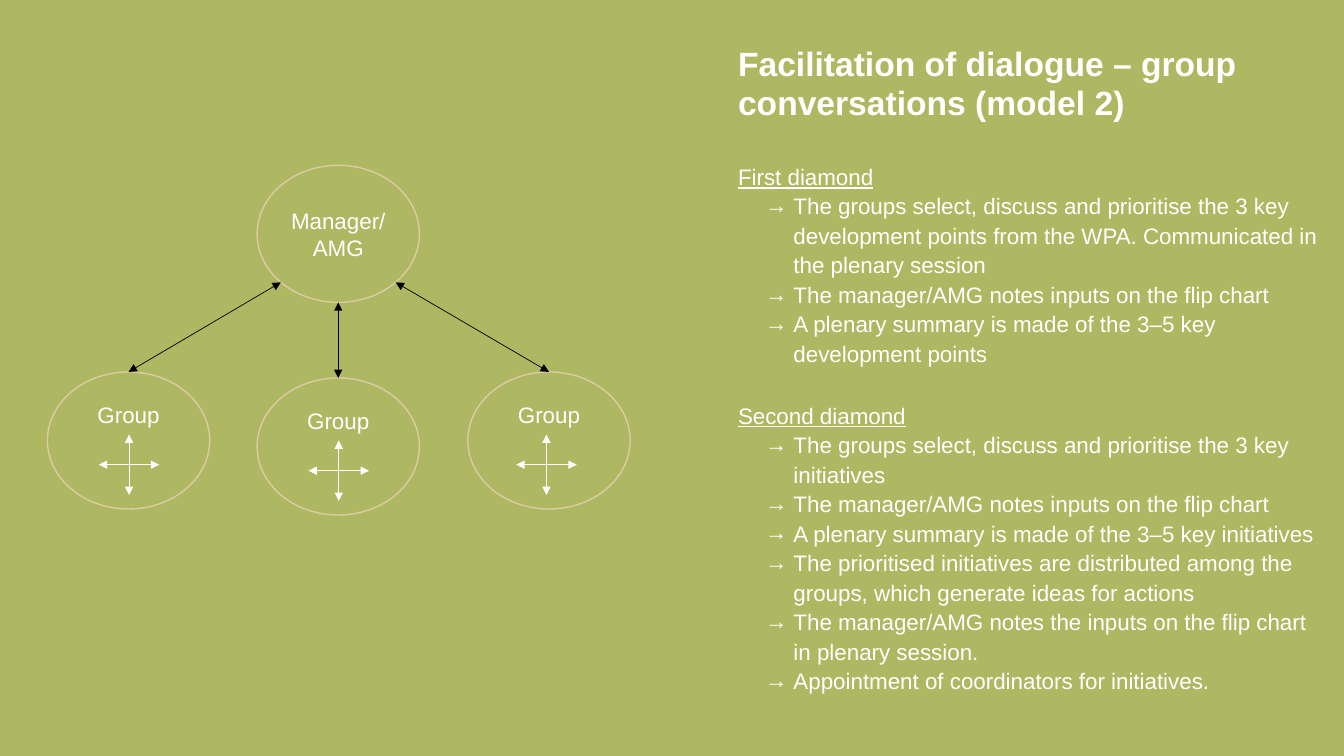
"""Build the slide on facilitating dialogue through group conversations."""
import math

from lxml import etree
from pptx import Presentation
from pptx.dml.color import RGBColor
from pptx.enum.shapes import MSO_CONNECTOR, MSO_SHAPE
from pptx.enum.text import MSO_ANCHOR, MSO_AUTO_SIZE, PP_ALIGN
from pptx.oxml.ns import qn
from pptx.util import Inches, Pt

ELLIPSE, STRAIGHT = MSO_SHAPE.OVAL, MSO_CONNECTOR.STRAIGHT
TOP, MIDDLE = MSO_ANCHOR.TOP, MSO_ANCHOR.MIDDLE
LEFT, CENTER = PP_ALIGN.LEFT, PP_ALIGN.CENTER
NO_AUTOFIT = MSO_AUTO_SIZE.NONE

COLORS = {"olive": "AEB862", "sand": "DDCBA4", "white": "FFFFFF", "black": "000000"}
CIRCLE_W, CIRCLE_H = 1.61, 1.36
MANAGER_LEFT, MANAGER_TOP = 2.55, 1.64
GROUPS = [(0.47, 3.69, 1.28), (2.55, 3.75, 3.36), (4.64, 3.69, 5.42)]
CROSS_DROP, CROSS_ARM = 0.92, 0.3

DIAMONDS = {
    "First diamond": [
        "The groups select, discuss and prioritise the 3 key development points "
        "from the WPA. Communicated in the plenary session",
        "The manager/AMG notes inputs on the flip chart",
        "A plenary summary is made of the 3–5 key development points",
    ],
    "Second diamond": [
        "The groups select, discuss and prioritise the 3 key initiatives",
        "The manager/AMG notes inputs on the flip chart",
        "A plenary summary is made of the 3–5 key initiatives",
        "The prioritised initiatives are distributed among the groups, "
        "which generate ideas for actions",
        "The manager/AMG notes the inputs on the flip chart in plenary session.",
        "Appointment of coordinators for initiatives.",
    ],
}


def color(name):
    """Return the named colour."""
    return RGBColor.from_string(COLORS[name])


class DialogueSlide:
    """Hold the style and the slide, and draw each kind of element."""

    def __init__(self, deck, font="Arial", size=16):
        """Add a title-only slide with a plain background."""
        self.font, self.size = font, size
        self.slide = deck.slides.add_slide(deck.slide_layouts[5])
        self.slide.background.fill.solid()
        self.slide.background.fill.fore_color.rgb = color("olive")

    def style(self, paragraph, size=None, bold=False, underline=False):
        """Set the font of a paragraph."""
        font = paragraph.font
        font.name, font.size = self.font, Pt(size or self.size)
        font.bold, font.underline = bold, underline
        font.color.rgb = color("white")

    def frame(self, shape, inset=0, bottom=0, anchor=TOP):
        """Set insets, wrapping and anchor of a text frame and return it."""
        frame = shape.text_frame
        frame.auto_size, frame.word_wrap = NO_AUTOFIT, True
        frame.vertical_anchor = anchor
        frame.margin_left = frame.margin_right = frame.margin_top = Inches(inset)
        frame.margin_bottom = Inches(bottom)
        return frame

    def title(self, text, left, top, width, height):
        """Place and format the title."""
        title = self.slide.shapes.title
        title.left, title.top = Inches(left), Inches(top)
        title.width, title.height = Inches(width), Inches(height)
        paragraph = self.frame(title).paragraphs[0]
        paragraph.text = text
        paragraph.alignment, paragraph.line_spacing = LEFT, 0.97
        self.style(paragraph, size=24, bold=True)

    def agenda(self, sections, left, top, width, height):
        """Write underlined headings, each with arrow-bulleted steps."""
        box = self.slide.shapes.add_textbox(
            Inches(left), Inches(top), Inches(width), Inches(height))
        frame = self.frame(box)
        for number, (heading, steps) in enumerate(sections.items()):
            paragraph = frame.add_paragraph() if number else frame.paragraphs[0]
            paragraph.text, paragraph.line_spacing = heading, 1.1
            if number:
                paragraph.space_before = Pt(23)
            self.style(paragraph, underline=True)
            for step in steps:
                self.step(frame.add_paragraph(), step)

    def step(self, paragraph, text):
        """Write one step with an arrow bullet."""
        paragraph.text, paragraph.level, paragraph.line_spacing = text, 1, 1.1
        properties = paragraph._p.get_or_add_pPr()
        properties.set("marL", str(Inches(0.55)))
        properties.set("indent", str(Inches(-0.28)))
        etree.SubElement(properties, qn("a:buFont"), typeface=self.font)
        etree.SubElement(properties, qn("a:buChar"), char="→")
        self.style(paragraph)

    def circle(self, text, left, top, bottom=0.08):
        """Draw a labelled ellipse; a larger bottom inset lifts the label."""
        circle = self.slide.shapes.add_shape(
            ELLIPSE, Inches(left), Inches(top), Inches(CIRCLE_W), Inches(CIRCLE_H))
        circle.shadow.inherit = False
        circle.fill.solid()
        circle.fill.fore_color.rgb = color("olive")
        circle.line.color.rgb, circle.line.width = color("sand"), Pt(1)
        paragraph = self.frame(circle, 0.08, bottom, MIDDLE).paragraphs[0]
        paragraph.text, paragraph.alignment = text, CENTER
        self.style(paragraph)

    def arrow(self, start, end, line_color="black", shapes=None):
        """Draw a thin double-headed arrow."""
        arrow = (shapes or self.slide.shapes).add_connector(
            STRAIGHT, *(Inches(length) for length in (*start, *end)))
        arrow.line.color.rgb, arrow.line.width = color(line_color), Pt(0.5)
        outline = arrow.line._get_or_add_ln()
        for end_tag in ("a:headEnd", "a:tailEnd"):
            etree.SubElement(outline, qn(end_tag), type="triangle")
        etree.SubElement(arrow._element.spPr, qn("a:effectLst"))

    def cross(self, x, y):
        """Draw two crossing arrows as one group."""
        shapes = self.slide.shapes.add_group_shape().shapes
        for dx, dy in ((CROSS_ARM, 0), (0, CROSS_ARM)):
            self.arrow((x - dx, y - dy), (x + dx, y + dy), "white", shapes)


def main():
    """Build and save the slide."""
    deck = Presentation()
    deck.slide_width, deck.slide_height = Inches(13.33), Inches(7.5)
    page = DialogueSlide(deck)
    page.title("Facilitation of dialogue – group conversations (model 2)",
               7.32, 0.45, 5.12, 1.1)
    page.agenda(DIAMONDS, 7.32, 1.59, 5.77, 5.28)

    page.circle("Manager/AMG", MANAGER_LEFT, MANAGER_TOP)
    manager_x = MANAGER_LEFT + CIRCLE_W / 2
    manager_y = MANAGER_TOP + CIRCLE_H / 2
    for (left, top, cross_x), degrees in zip(GROUPS, (135, 90, 45)):
        page.circle("Group", left, top, bottom=0.59)
        angle = math.radians(degrees)
        rim = (manager_x + CIRCLE_W / 2 * math.cos(angle),
               manager_y + CIRCLE_H / 2 * math.sin(angle))
        page.arrow(rim, (left + CIRCLE_W / 2, top))
        page.cross(cross_x, top + CROSS_DROP)
    deck.save("out.pptx")


if __name__ == "__main__":
    main()
